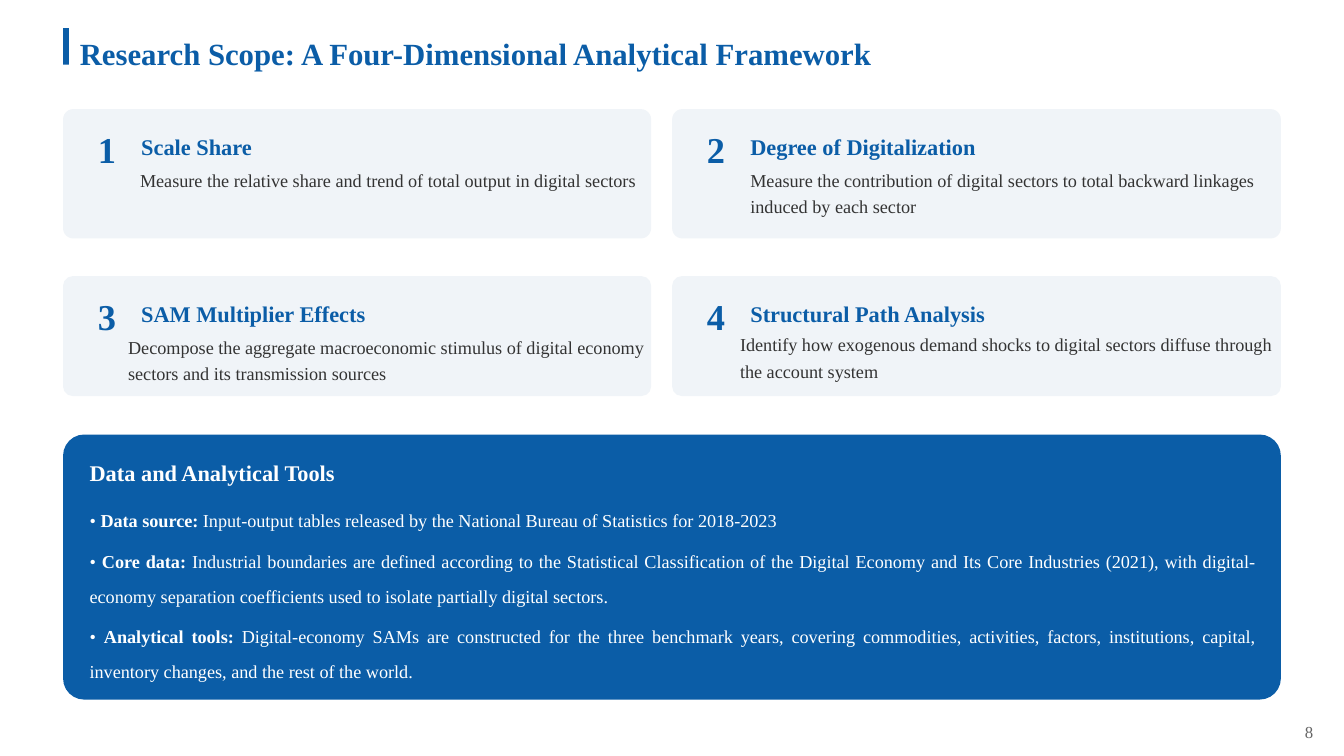
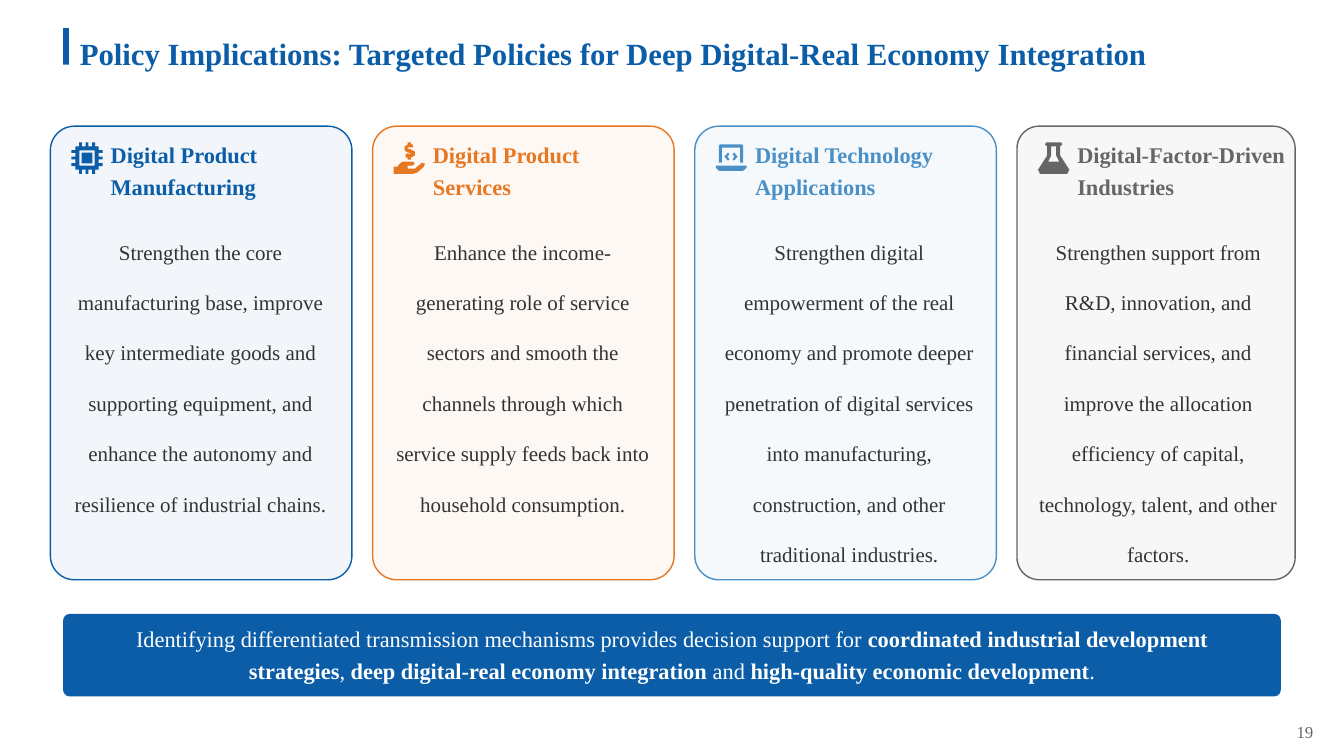
from dataclasses import dataclass

from lxml.etree import SubElement
from pptx import Presentation
from pptx.dml.color import RGBColor
from pptx.enum.shapes import MSO_SHAPE as Kind
from pptx.enum.text import MSO_ANCHOR as Anchor, MSO_AUTO_SIZE as Auto, PP_ALIGN as Align
from pptx.oxml.ns import qn
from pptx.util import Cm, Pt


@dataclass(frozen=True)
class Theme:
    """Colours, font and type sizes of the deck."""
    font: str = "Times New Roman"
    blue: str = "0B5DA7"
    orange: str = "E87722"
    sky: str = "4A90C6"
    gray: str = "666666"
    ink: str = "333333"
    pale: str = "F0F4F8"
    white: str = "FFFFFF"
    title: int = 22
    digit: int = 26
    head: int = 16
    note: int = 15
    body: int = 13
    page: int = 12


T = Theme()
LEFT, WIDE = 1.59, 30.69
COLS = [(LEFT, 14.82), (16.94, 15.34)]
ROWS = [(2.75, 3.26), (6.96, 3.02)]

SCOPE = "Research Scope: A Four-Dimensional Analytical Framework"
AIMS = [
    ("Scale Share", (1.94, 1.41),
     ["Measure the relative share and trend of total output in digital sectors"]),
    ("Degree of Digitalization", (1.97, 1.41),
     ["Measure the contribution of digital sectors to total backward linkages",
      "induced by each sector"]),
    ("SAM Multiplier Effects", (1.64, 1.4),
     ["Decompose the aggregate macroeconomic stimulus of digital economy",
      "sectors and its transmission sources"]),
    ("Structural Path Analysis", (1.71, 1.34),
     ["Identify how exogenous demand shocks to digital sectors diffuse through",
      "the account system"]),
]
TOOLS = [
    ("• ", "Data source: ",
     "Input-output tables released by the National Bureau of Statistics for 2018-2023"),
    ("• ", "Core data: ",
     "Industrial boundaries are defined according to the Statistical Classification of the "
     "Digital Economy and Its Core Industries (2021), with digital-economy separation "
     "coefficients used to isolate partially digital sectors."),
    ("• ", "Analytical tools: ",
     "Digital-economy SAMs are constructed for the three benchmark years, covering "
     "commodities, activities, factors, institutions, capital, inventory changes, and the "
     "rest of the world."),
]

POLICY = "Policy Implications: Targeted Policies for Deep Digital-Real Economy Integration"
PLANS = [
    ("chip", T.blue, ["Digital Product", "Manufacturing"], 7.6, (0.52, 6.53),
     "Strengthen the core manufacturing base, improve key intermediate goods and supporting "
     "equipment, and enhance the autonomy and resilience of industrial chains."),
    ("hand", T.orange, ["Digital Product", "Services"], 7.6, (0.52, 6.53),
     "Enhance the income-generating role of service sectors and smooth the channels through "
     "which service supply feeds back into household consumption."),
    ("laptop", T.sky, ["Digital Technology", "Applications"], 7.6, (0.63, 6.53),
     "Strengthen digital empowerment of the real economy and promote deeper penetration of "
     "digital services into manufacturing, construction, and other traditional industries."),
    ("flask", T.gray, ["Digital-Factor-Driven", "Industries"], 7.01, (0.52, 6.08),
     "Strengthen support from R&D, innovation, and financial services, and improve the "
     "allocation efficiency of capital, technology, talent, and other factors."),
]
CLOSE = ("Identifying differentiated transmission mechanisms provides decision support for ",
         "coordinated industrial development strategies", ", ",
         "deep digital-real economy integration", " and ",
         "high-quality economic development", ".")

GRID = 31


def square(lo, hi):
    """Return the corners of a square."""
    return [(lo, lo), (hi, lo), (hi, hi), (lo, hi)]


def pins():
    """Return the chip outline: one pinned side turned four times."""
    side = [(4, 4)]
    for c in (9, 15.5, 22):
        side += [(c - 1.4, 4), (c - 1.4, 0), (c + 1.4, 0), (c + 1.4, 4)]
    edge = []
    for _ in range(4):
        edge += side
        side = [(GRID - y, x) for x, y in side]
    return edge


ANGLE = [(12, 10), (13.5, 11.5), (11.5, 14), (13.5, 16.5), (12, 18), (8.5, 14)]
ICONS = {
    "chip": [pins(), square(8, 23), square(10.2, 20.8)],
    "hand": [
        [(14, 0), (17, 0), (17, 2), (19, 2), (19, 5), (14, 5), (14, 6), (17, 7), (21, 9),
         (21, 13), (17, 15), (17, 17), (14, 17), (14, 15), (12, 15), (12, 11), (17, 11),
         (17, 10.5), (14, 10), (11, 8), (11, 4), (14, 2)],
        [(6, 21), (9, 19), (19, 19), (21, 21), (19, 23), (14, 23), (14, 26), (21, 26),
         (28, 20), (31, 21), (30, 24), (23, 30), (19, 31), (0, 31), (0, 24), (4, 24)]],
    "laptop": [
        [(3, 20), (3, 3), (4, 2), (26, 2), (27, 3), (27, 20), (24, 20), (24, 5), (6, 5),
         (6, 20)],
        [(0, 23), (30.5, 23), (30.5, 25), (27, 28), (3, 28), (0, 25)],
        ANGLE, [(30 - x, y) for x, y in ANGLE]],
    "flask": [
        [(8, 0), (23, 0), (24, 2), (22, 4), (22, 13), (31, 27), (29, 31), (2, 31), (0, 27),
         (9, 13), (9, 4), (7, 2)],
        [(13, 4), (18, 4), (18, 13), (21, 19), (10, 19), (13, 13)]],
}


def paint(shape, fill, line=None, alpha=None):
    """Set fill, line and opacity of a shape."""
    shape.shadow.inherit = False
    shape.fill.solid()
    shape.fill.fore_color.rgb = RGBColor.from_string(fill)
    if alpha:
        tone = shape.fill._xPr.find(".//" + qn("a:srgbClr"))
        SubElement(tone, qn("a:alpha")).set("val", str(alpha * 1000))
    if line:
        shape.line.color.rgb = RGBColor.from_string(line)
        shape.line.width = Pt(1)
    else:
        shape.line.fill.background()


def panel(slide, box, fill, line=None, alpha=None, kind=Kind.ROUNDED_RECTANGLE):
    """Draw a filled box."""
    shape = slide.shapes.add_shape(kind, *map(Cm, box))
    if kind == Kind.ROUNDED_RECTANGLE:
        shape.adjustments[0] = 0.08
    paint(shape, fill, line, alpha)


def icon(slide, name, x, y, color):
    """Draw an icon as one freeform."""
    first, *rest = [[(round(100 * px), round(100 * py)) for px, py in pts]
                    for pts in ICONS[name]]
    pen = slide.shapes.build_freeform(*first[0], scale=Cm(0.79) / (GRID * 100))
    pen.add_line_segments(first[1:])
    for pts in rest:
        pen.move_to(*pts[0])
        pen.add_line_segments(pts[1:])
    paint(pen.convert_to_shape(Cm(x), Cm(y)), color)


def write(frame, paras, size, color, bold=False, space=1.2, align=Align.LEFT,
          anchor=Anchor.MIDDLE, wrap=False, gap=0):
    """Fill a frame; in a tuple every second run is bold."""
    frame.auto_size = Auto.NONE
    frame.word_wrap = wrap
    frame.vertical_anchor = anchor
    frame.margin_left = frame.margin_right = frame.margin_top = frame.margin_bottom = 0
    for i, runs in enumerate(paras):
        para = frame.add_paragraph() if i else frame.paragraphs[0]
        para.alignment, para.line_spacing = align, space
        if i and gap:
            para.space_before = Pt(gap)
        for j, text in enumerate((runs,) if isinstance(runs, str) else runs):
            run = para.add_run()
            run.text = text
            font = run.font
            font.name, font.size = T.font, Pt(size)
            font.bold = bold or j % 2 == 1
            font.color.rgb = RGBColor.from_string(color)


def label(slide, box, paras, size, color, **style):
    """Add a text box."""
    write(slide.shapes.add_textbox(*map(Cm, box)).text_frame, paras, size, color, **style)


def start(deck, title, page):
    """Add a slide with the shared title, bar and page number."""
    slide = deck.slides.add_slide(deck.slide_layouts[5])
    panel(slide, (LEFT, 0.71, 0.15, 0.92), T.blue, kind=Kind.RECTANGLE)
    head = slide.shapes.title
    head.left, head.top, head.width, head.height = map(Cm, (2.01, 0.56, 30.33, 1.19))
    write(head.text_frame, [title], T.title, T.blue, bold=True, space=1.4)
    label(slide, (31.75, 17.98, 1.35, 0.71), [str(page)], T.page, T.gray,
          space=1.4, align=Align.RIGHT)
    return slide


def scope(deck):
    """Build the research scope slide."""
    slide = start(deck, SCOPE, 8)
    for i, (head, (dx, dy), lines) in enumerate(AIMS):
        (x, w), (y, h) = COLS[i % 2], ROWS[i // 2]
        panel(slide, (x, y, w, h), T.pale)
        label(slide, (x + 0.38, y + 0.29, 1.45, 1.2), [str(i + 1)], T.digit, T.blue,
              bold=True, align=Align.CENTER)
        label(slide, (x + 1.97, y + 0.36, 5.28, 0.91), [head], T.head, T.blue,
              bold=True, space=1.4)
        label(slide, (x + dx, y + dy, 12.95, 1.35), lines, T.body, T.ink, anchor=Anchor.TOP)
    panel(slide, (LEFT, 10.95, WIDE, 6.68), T.blue)
    label(slide, (2.26, 11.38, 10.59, 0.91), ["Data and Analytical Tools"], T.head, T.white,
          bold=True)
    label(slide, (2.26, 12.51, 29.36, 4.24), TOOLS, T.body, T.white, space=1.6,
          align=Align.JUSTIFY, anchor=Anchor.TOP, wrap=True, gap=4)


def policy(deck):
    """Build the policy slide."""
    slide = start(deck, POLICY, 19)
    y = 3.18
    for i, (name, color, head, w, (dx, span), text) in enumerate(PLANS):
        x = 1.27 + 8.12 * i
        panel(slide, (x, y, w, 11.43), color, color, 5)
        icon(slide, name, x + 0.53, y + 0.41, color)
        label(slide, (x + 1.52, y + 0.36, w - 1.96, 1.37), head, T.head, color, bold=True)
        label(slide, (x + dx, y + 2.21, span, 8.66), [text], T.note, T.ink, space=2,
              align=Align.CENTER, anchor=Anchor.TOP, wrap=True)
    panel(slide, (LEFT, 15.47, WIDE, 2.08), T.blue)
    label(slide, (2.29, 15.84, 29.29, 1.19), [CLOSE], T.head, T.white,
          align=Align.CENTER, wrap=True)


def main():
    """Build and save the deck."""
    deck = Presentation()
    deck.slide_width, deck.slide_height = Cm(33.87), Cm(19.05)
    scope(deck)
    policy(deck)
    deck.save("out.pptx")


if __name__ == "__main__":
    main()
